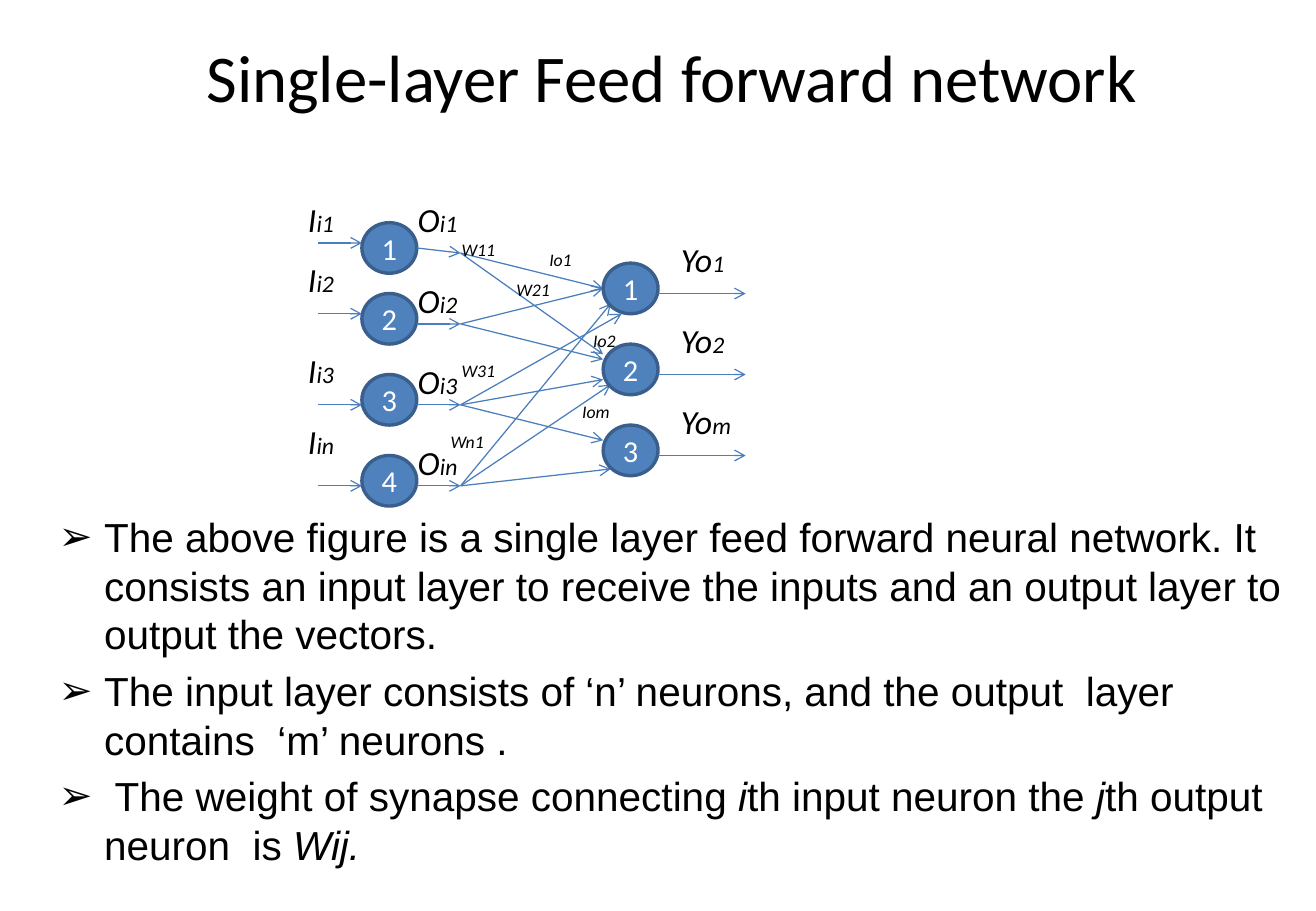
from lxml.etree import SubElement
from pptx import Presentation
from pptx.dml.color import RGBColor
from pptx.enum.shapes import MSO_CONNECTOR, MSO_SHAPE
from pptx.enum.text import MSO_ANCHOR, MSO_AUTO_SIZE, PP_ALIGN
from pptx.oxml.ns import qn
from pptx.util import Pt

TITLE = "Single-layer Feed forward network"
# Each point is a list of (text, italic) runs
POINTS = [
    [("The above figure is a single layer feed forward neural network. It consists an input "
      "layer to receive the inputs and an output layer to output the vectors.", False)],
    [("The input layer consists of ‘n’ neurons, and the output  layer contains  ‘m’ neurons .",
      False)],
    [(" The weight of synapse connecting ", False), ("i", True), ("th input neuron the ", False),
     ("j", True), ("th output neuron  is ", False), ("Wij.", True)],
]
# number, index, neuron top, I label top, O label top, incoming arrow y, start y, junction y
INPUTS = [
    ("1", "i1", 132, 114, 114, 144, 147, 150),
    ("2", "i2", 174, 150, 162, 186, 192, 192),
    ("3", "i3", 222, 204, 210, 240, 240, 240),
    ("4", "in", 270, 246, 258, 288, 288, 288),
]
# number, index, neuron top
OUTPUTS = [("1", "1", 156), ("2", "2", 204), ("3", "m", 252)]
# For each input: arrow ends as (distance into the output neuron, y)
SYNAPSES = [
    [(0, 171), (0, 210)],
    [(0, 171), (0, 213)],
    [(11, 186), (0, 225), (0, 261)],
    [(4.5, 180), (4.5, 228), (4.5, 278)],
]
WEIGHTS = [("W11", 266.5, 138), ("W21", 299, 162), ("Io1", 318.5, 144), ("Io2", 344.5, 192),
           ("Iom", 338, 234), ("W31", 266.5, 210), ("Wn1", 260, 252)]

NEURON_W, NEURON_H = 32.5, 30
ARROW_X, INPUT_X, JUNCTION_X, OUTPUT_X, END_X = 188.5, 214.5, 273, 357.5, 442
BLACK, WHITE, BLUE, OUTLINE, ARROW = "000000", "FFFFFF", "4F81BD", "3A5F8C", "4B7EBC"


def color(hex_value):
    return RGBColor.from_string(hex_value)


def box(left, top, width, height):
    return [Pt(value) for value in (left, top, width, height)]


def place(shape, *bounds):
    for side, value in zip(("left", "top", "width", "height"), box(*bounds)):
        setattr(shape, side, value)


def add_run(paragraph, text, size, hex_value=BLACK, italic=False, name="Calibri"):
    run = paragraph.add_run()
    run.text = text
    style = {"size": Pt(size), "name": name, "italic": italic}
    for key, value in style.items():
        setattr(run.font, key, value)
    run.font.color.rgb = color(hex_value)


def add_label(left, top, width, height, *parts):
    """Add italic text made of (text, size) parts."""
    frame = slide.shapes.add_textbox(*box(left, top, width, height)).text_frame
    frame.word_wrap = True
    for text, size in parts:
        add_run(frame.paragraphs[0], text, size, italic=True)


def add_neuron(number, left, top):
    neuron = slide.shapes.add_shape(MSO_SHAPE.OVAL, *box(left, top, NEURON_W, NEURON_H))
    neuron.shadow.inherit = False
    neuron.fill.solid()
    neuron.fill.fore_color.rgb = color(BLUE)
    neuron.line.color.rgb = color(OUTLINE)
    neuron.line.width = Pt(2)
    frame = neuron.text_frame
    layout = {"margin_left": 0, "margin_right": 0, "margin_top": 0, "margin_bottom": 0,
              "word_wrap": False, "vertical_anchor": MSO_ANCHOR.MIDDLE}
    for key, value in layout.items():
        setattr(frame, key, value)
    frame.paragraphs[0].alignment = PP_ALIGN.CENTER
    add_run(frame.paragraphs[0], number, 18, WHITE)


def add_arrow(x1, y1, x2, y2):
    arrow = slide.shapes.add_connector(MSO_CONNECTOR.STRAIGHT, *box(x1, y1, x2, y2))
    arrow.line.color.rgb = color(ARROW)
    arrow.line.width = Pt(0.75)
    SubElement(arrow.line._get_or_add_ln(), qn("a:tailEnd"), type="arrow")
    SubElement(arrow._element.spPr, qn("a:effectLst"))


deck = Presentation()
deck.slide_width, deck.slide_height = Pt(780), Pt(540)
slide = deck.slides.add_slide(deck.slide_layouts[1])
title, body = slide.placeholders

place(title, 32.5, 18, 731.5, 53.5)
title.text_frame.auto_size = MSO_AUTO_SIZE.NONE
title.text_frame.vertical_anchor = MSO_ANCHOR.MIDDLE
title.text_frame.paragraphs[0].alignment = PP_ALIGN.CENTER
add_run(title.text_frame.paragraphs[0], TITLE, 39.6)

place(body, 27.5, 300, 752.5, 222.5)
body.text_frame.auto_size = MSO_AUTO_SIZE.NONE
for position, point in enumerate(POINTS):
    paragraph = body.text_frame.add_paragraph() if position else body.text_frame.paragraphs[0]
    properties = paragraph._p.get_or_add_pPr()
    properties.set("marL", str(Pt(27)))
    properties.set("indent", str(Pt(-27)))
    SubElement(properties, qn("a:buChar"), char="➢")
    for text, italic in point:
        add_run(paragraph, text, 24, italic=italic, name="Arial")

for row, synapse_ends in zip(INPUTS, SYNAPSES):
    number, index, top, i_top, o_top, arrow_y, start_y, junction_y = row
    add_neuron(number, INPUT_X, top)
    add_arrow(ARROW_X, arrow_y, INPUT_X, arrow_y)
    add_arrow(INPUT_X + NEURON_W, start_y, JUNCTION_X, junction_y)
    for inset, end_y in synapse_ends:
        add_arrow(JUNCTION_X, junction_y, OUTPUT_X + inset, end_y)
    add_label(175.5, i_top, 39, 31.5, ("I", 20), (index, 14))
    add_label(240.5, o_top, 45.5, 31.5, ("O", 20), (index, 14))

for number, index, top in OUTPUTS:
    add_neuron(number, OUTPUT_X, top)
    add_arrow(OUTPUT_X + NEURON_W, top + 18, END_X, top + 18)
    add_label(396.5, top - 18, 52, 31.5, ("Yo", 20), (index, 14))

for text, left, top in WEIGHTS:
    add_label(left, top, 58.5, 20, (text, 10.5))

deck.save("out.pptx")
